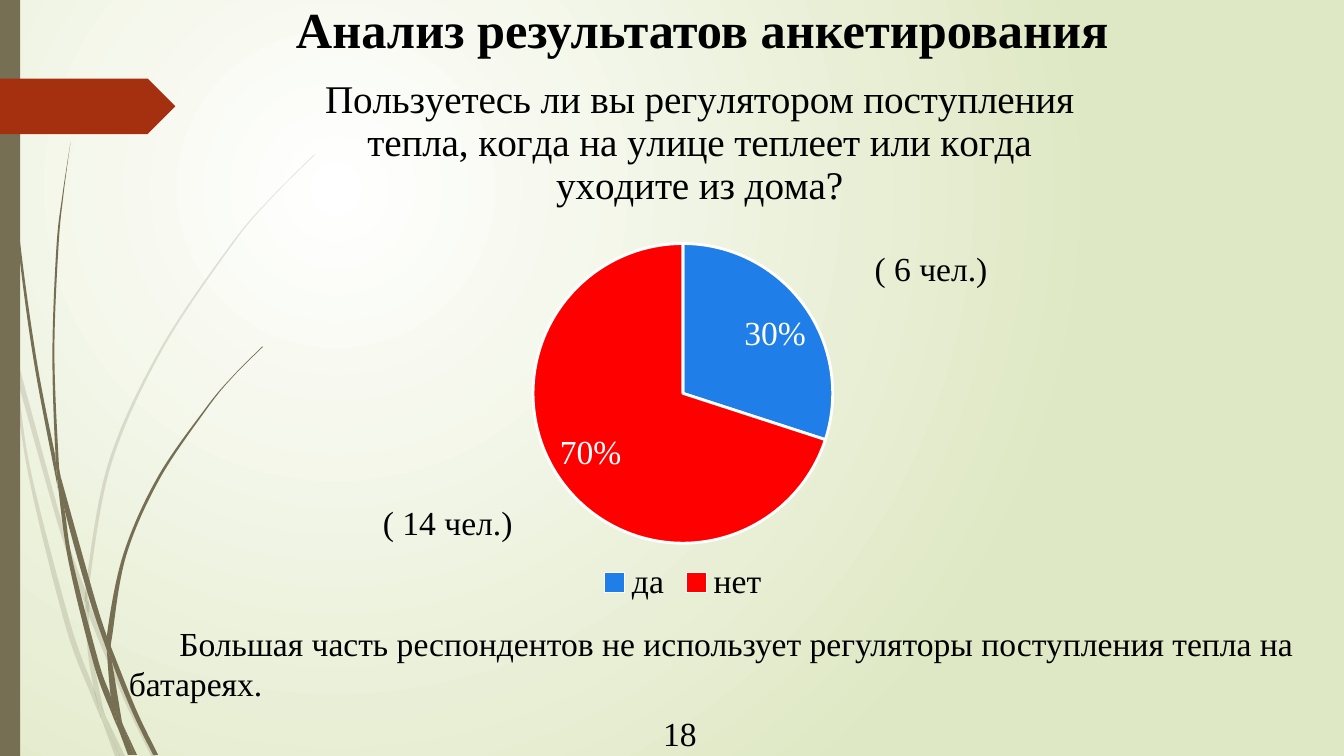
from lxml.etree import SubElement
from pptx import Presentation
from pptx.chart.data import CategoryChartData
from pptx.dml.color import RGBColor
from pptx.enum.chart import XL_CHART_TYPE, XL_LABEL_POSITION, XL_LEGEND_POSITION
from pptx.enum.shapes import MSO_SHAPE
from pptx.oxml import parse_xml
from pptx.oxml.ns import nsdecls, qn
from pptx.util import Cm, Pt

WHITE = RGBColor(0xFF, 0xFF, 0xFF)
BLACK = RGBColor(0, 0, 0)
CREAM = RGBColor(0xDF, 0xE8, 0xC4)
OLIVE = RGBColor(0x76, 0x6F, 0x54)
RUST = RGBColor(0xA5, 0x30, 0x10)
BLUE = RGBColor(0x1F, 0x7E, 0xE7)
RED = RGBColor(0xFF, 0, 0)
FACE = "Times New Roman"
INCH = 2.54

deck = Presentation()
deck.slide_width, deck.slide_height = Cm(33.87), Cm(19.05)
slide = deck.slides.add_slide(deck.slide_layouts[6])
shapes = slide.shapes


def add_text(text, left, top, width, height, size=24, bold=False, indent=0, wrap=True):
    box = shapes.add_textbox(Cm(left), Cm(top), Cm(width), Cm(height))
    box.text_frame.word_wrap = wrap
    para = box.text_frame.paragraphs[0]
    if indent:
        para._p.get_or_add_pPr().set("indent", str(Cm(indent)))
    run = para.add_run()
    run.text = text
    font = run.font
    font.name, font.size, font.bold = FACE, Pt(size), bold
    font.color.rgb = BLACK


def add_blade(edges, alpha):
    """Draw a piece of grass between two edges, each a smooth curve through points in inches."""
    dots = [(Cm(x * INCH), Cm(y * INCH)) for edge in edges for x, y in edge]
    pen = shapes.build_freeform(*dots[0])
    pen.add_line_segments(dots[1:], close=True)
    blade = pen.convert_to_shape()
    blade.shadow.inherit = False
    blade.fill.solid()
    blade.fill.fore_color.rgb = OLIVE
    blade.line.fill.background()
    if alpha < 100:
        tint = blade._element.spPr.find(qn("a:solidFill"))[0]
        SubElement(tint, qn("a:alpha"), val=str(alpha * 1000))
    nodes = [pt.getparent() for pt in blade._element.iter(qn("a:pt"))]
    spots = [(int(node[0].get("x")), int(node[0].get("y"))) for node in nodes]
    first = 0
    for edge in edges:
        last = first + len(edge) - 1
        for i in range(first + 1, last + 1):
            a, b, c, d = (spots[min(max(j, first), last)] for j in range(i - 2, i + 2))
            curve = SubElement(nodes[i].getparent(), qn("a:cubicBezTo"))
            for x, y in (
                [q + (r - p) / 6 for p, q, r in zip(a, b, c)],
                [q - (r - p) / 6 for p, q, r in zip(b, c, d)],
                c,
            ):
                SubElement(curve, qn("a:pt"), x=str(round(x)), y=str(round(y)))
            nodes[i].getparent().replace(nodes[i], curve)
        first = last + 1


# Background glow
glow = slide.background.fill
glow.gradient()
for stop, color, place in zip(glow.gradient_stops, (WHITE, CREAM), (0, 1)):
    stop.color.rgb, stop.position = color, place
grad = slide._element.find(".//" + qn("a:gradFill"))
grad.replace(grad.find(qn("a:lin")), parse_xml(
    f'<a:path {nsdecls("a")} path="circle">'
    '<a:fillToRect l="50000" t="50000" r="100000" b="100000"/></a:path>'))

# Grass: each piece has one edge going one way and the other coming back
PALE = [
    ([(0.11, 3.5), (0.09, 3.22), (0, 2.82)], [(0, 2.99), (0.1, 3.44), (0.11, 3.5)]),
    ([(0.17, 3.76), (0.58, 5.22), (0.84, 5.99)], [(0.85, 5.86), (0.62, 5.2), (0.14, 3.45)]),
    ([(0.88, 5.96), (0.88, 6.1), (1.23, 6.94), (1.5, 7.5)],
     [(1.55, 7.5), (1.27, 6.92), (0.92, 6.07), (0.88, 5.96)]),
    ([(1.05, 7.11), (1.19, 7.5)], [(1.24, 7.5), (1.05, 7.11)]),
    ([(0.11, 3.5), (0.28, 4.7), (0.65, 6.21), (0.92, 6.93), (1.01, 7.14)],
     [(0.99, 7.07), (0.93, 6.83), (0.7, 6.19), (0.31, 4.69), (0.17, 3.76), (0.11, 3.5)]),
    ([(0.84, 5.99), (0.87, 6.46), (0.93, 6.83), (0.96, 6.92), (1.05, 7.11)],
     [(1.03, 7.06), (0.91, 6.46), (0.88, 6.1), (0.84, 5.99)]),
    ([(0.88, 5.96), (0.88, 5.84), (1.1, 4.62), (1.6, 3.49), (2.29, 2.45), (2.68, 1.98),
      (3.12, 1.54)],
     [(3.12, 1.53), (2.68, 1.97), (2.28, 2.44), (1.58, 3.48), (1.07, 4.61), (0.85, 5.84),
      (0.88, 5.96)]),
    ([(1.01, 7.14), (1.14, 7.5)], [(1.19, 7.5), (1.01, 7.14)]),
    ([(0.88, 6.1), (0.88, 5.96), (0.85, 5.86)], [(0.84, 5.99), (0.88, 6.08)]),
    ([(0.93, 6.83), (0.99, 7.07), (1.01, 7.14), (1.19, 7.5)],
     [(1.19, 7.5), (1.05, 7.11), (0.96, 6.92), (0.93, 6.83)]),
]
DARK = [
    ([(0.03, 0), (0.04, 0.48), (0.07, 1.1), (0.17, 2.33), (0.33, 3.55), (0.56, 4.77),
      (0.57, 4.81)],
     [(0.55, 4.53), (0.36, 3.55), (0.19, 2.32), (0.08, 1.09), (0.05, 0.48), (0.04, 0)]),
    ([(0.6, 4.72), (0.64, 5.05), (0.88, 5.92), (1.06, 6.45)],
     [(1.06, 6.31), (0.93, 5.9), (0.6, 4.72)]),
    ([(1.1, 6.41), (1.11, 6.56), (1.32, 7.08), (1.52, 7.49)],
     [(1.57, 7.49), (1.36, 7.06), (1.13, 6.49), (1.1, 6.41)]),
    ([(0.57, 4.77), (0.68, 5.57), (0.93, 6.59), (1.11, 7.08), (1.17, 7.22)],
     [(1.16, 7.17), (1.1, 6.91), (0.98, 6.57), (0.72, 5.56), (0.64, 5.05), (0.57, 4.77)]),
    ([(0.6, 4.72), (0.58, 4.53), (0.54, 3.49), (0.58, 2.45), (0.63, 1.93), (0.7, 1.41)],
     [(0.7, 1.41), (0.62, 1.93), (0.56, 2.45), (0.52, 3.49), (0.55, 4.49), (0.6, 4.72)]),
    ([(1.22, 7.19), (1.33, 7.49)], [(1.36, 7.49), (1.22, 7.19)]),
    ([(0.55, 4.49), (0.57, 4.77), (0.64, 5.05)], [(0.6, 4.72), (0.55, 4.49)]),
    ([(1.1, 6.41), (1.11, 6.33), (1.25, 5.52), (1.58, 4.76), (2.05, 4.06), (2.31, 3.74),
      (2.61, 3.44)],
     [(2.6, 3.44), (2.31, 3.73), (2.04, 4.05), (1.56, 4.74), (1.22, 5.51), (1.06, 6.31),
      (1.1, 6.41)]),
    ([(1.17, 7.22), (1.27, 7.49)], [(1.31, 7.49), (1.17, 7.22)]),
    ([(1.06, 6.45), (1.1, 6.91), (1.16, 7.06), (1.22, 7.19)],
     [(1.21, 7.16), (1.11, 6.56), (1.09, 6.51), (1.06, 6.45)]),
    ([(1.06, 6.45), (1.09, 6.51), (1.11, 6.56)], [(1.1, 6.41), (1.06, 6.31), (1.06, 6.45)]),
    ([(1.1, 6.91), (1.16, 7.17), (1.17, 7.22), (1.3, 7.49)],
     [(1.33, 7.49), (1.22, 7.19), (1.16, 7.06), (1.1, 6.91)]),
]
for group, alpha in ((PALE, 20), (DARK, 100)):
    for edges in group:
        add_blade(edges, alpha)

# Side bar and red tag
for kind, top, width, height, color in (
    (MSO_SHAPE.RECTANGLE, 0, 0.51, 19.05, OLIVE),
    (MSO_SHAPE.PENTAGON, 1.98, 4.42, 1.4, RUST),
):
    mark = shapes.add_shape(kind, 0, Cm(top), Cm(width), Cm(height))
    mark.shadow.inherit = False
    mark.fill.solid()
    mark.fill.fore_color.rgb = color
    mark.line.fill.background()

# Pie of answers
data = CategoryChartData()
data.categories = ["да", "нет"]
data.add_series("Series 1", (6, 14))
chart = shapes.add_chart(XL_CHART_TYPE.PIE, Cm(5.11), Cm(0.51), Cm(24.2), Cm(14.81), data).chart
chart.font.name, chart.font.size = FACE, Pt(24)
chart.font.color.rgb = BLACK
title = chart.chart_title
title.text_frame.text = ("Пользуетесь ли вы регулятором поступления тепла, "
                         "когда на улице теплеет или когда уходите из дома?")
font = title.text_frame.paragraphs[0].runs[0].font
font.name, font.size, font.bold = FACE, Pt(28), False
font.color.rgb = BLACK
title.include_in_layout = False
chart.has_legend = True
chart.legend.position = XL_LEGEND_POSITION.BOTTOM
chart.legend.include_in_layout = False

plot = chart.plots[0]
plot.vary_by_categories = True
series = plot.series[0]
labels = series.data_labels
labels.show_value = True
labels.position = XL_LABEL_POSITION.BEST_FIT
labels.font.name, labels.font.size = FACE, Pt(24)
labels.font.color.rgb = WHITE
for index, (color, share) in enumerate(((BLUE, "30%"), (RED, "70%"))):
    point = series.points[index]
    point.format.fill.solid()
    point.format.fill.fore_color.rgb = color
    point.format.line.color.rgb = WHITE
    point.format.line.width = Pt(2)
    label = point.data_label
    label.text_frame.text = share
    label.position = XL_LABEL_POSITION.BEST_FIT
    font = label.text_frame.paragraphs[0].runs[0].font
    font.name, font.size = FACE, Pt(24)
    font.color.rgb = WHITE

area = chart._chartSpace.chart.plotArea
for host, target, spot in (
    (area, '<c:layoutTarget val="inner"/>', {"x": 0, "y": 0.38, "w": 1, "h": 0.51}),
    (title._element, "", {"x": 0.12, "y": 0.08}),
):
    for old in host.findall(qn("c:layout")):
        host.remove(old)
    sizes = "".join(f'<c:{key} val="{val}"/>' for key, val in spot.items())
    host.insert(0 if host is area else 1, parse_xml(
        f'<c:layout {nsdecls("c")}><c:manualLayout>{target}<c:xMode val="edge"/>'
        f'<c:yMode val="edge"/>{sizes}</c:manualLayout></c:layout>'))

# Texts
add_text("( 14 чел.)", 9.4, 12.52, 4, 1.27)
add_text("( 6 чел.)", 21.79, 6.12, 4, 1.27)
add_text("Большая часть респондентов не использует регуляторы поступления тепла на батареях.",
         3, 15.57, 30.87, 2.31, indent=1.27)
add_text("18", 16.46, 17.83, 1.37, 1.22, wrap=False)
add_text("Анализ результатов анкетирования", 7.21, -0.18, 26.4, 1.8, size=36, bold=True)

deck.save("out.pptx")
